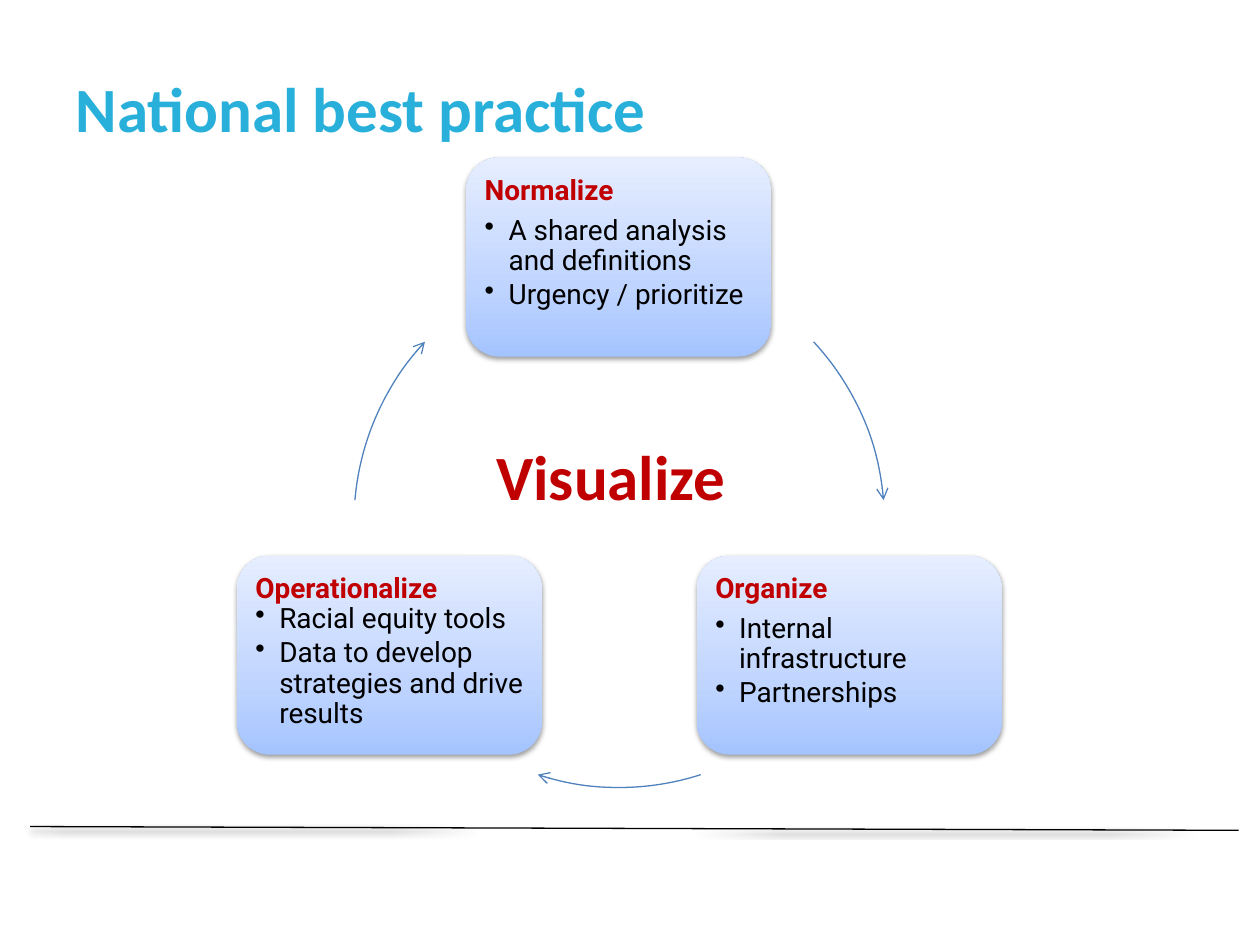
"""Build the "National best practice" slide with its three-step cycle."""
from lxml.etree import SubElement
from copy import deepcopy
from pptx import Presentation
from pptx.dml.color import RGBColor
from pptx.enum.shapes import MSO_CONNECTOR, MSO_SHAPE
from pptx.enum.text import MSO_ANCHOR, PP_ALIGN
from pptx.oxml.ns import qn
from pptx.util import Inches, Pt

CYAN = RGBColor(0x28, 0xB0, 0xDB)
RED = RGBColor(0xC0, 0x00, 0x00)
BLACK = RGBColor(0x00, 0x00, 0x00)
BLUE = RGBColor(0x4F, 0x81, 0xBD)
STOPS = [
    (0, RGBColor(0xA4, 0xC4, 0xFF)),
    (0.35, RGBColor(0xBF, 0xD4, 0xFF)),
    (1, RGBColor(0xE6, 0xEE, 0xFF)),
]

HEADING = {"size": Pt(36), "name": "Calibri", "bold": True}
STEP = {"size": Pt(16), "name": "Roboto", "bold": True}
ITEM = {"size": Pt(16), "name": "Roboto", "bold": False}
INSETS = {f"margin_{side}": Inches(0.07) for side in ("left", "top", "right", "bottom")}


def style(obj, values, color=None):
    for name, value in values.items():
        setattr(obj, name, value)
    if color is not None:
        obj.color.rgb = color


def add_shadow(sp):
    effects = SubElement(sp._element.spPr, qn("a:effectLst"))
    shadow = SubElement(effects, qn("a:outerShdw"), blurRad=str(Pt(3.1)),
                        dist=str(Pt(1.6)), dir="5400000", rotWithShape="0")
    black = SubElement(shadow, qn("a:srgbClr"), val="000000")
    SubElement(black, qn("a:alpha"), val="38000")


prs = Presentation()
prs.slide_width, prs.slide_height = Inches(10), Inches(7.5)
s = prs.slides.add_slide(prs.slide_layouts[5])

rule = s.shapes.add_connector(MSO_CONNECTOR.STRAIGHT, Inches(0.24), Inches(6.56),
                              Inches(9.83), Inches(6.59))
style(rule.line, {"width": Pt(0.75)}, BLACK)
add_shadow(rule)

title = s.shapes.title
style(title, {"left": Inches(0.5), "top": Inches(0.5),
              "width": Inches(9), "height": Inches(1.25)})
tf = title.text_frame
tf.vertical_anchor = MSO_ANCHOR.TOP
p = tf.paragraphs[0]
p.alignment = PP_ALIGN.LEFT
r = p.add_run()
r.text = "National best practice"
style(r.font, HEADING, CYAN)

steps = [
    (3.7, 1.25, "Normalize", 5.6,
     ["A shared analysis and definitions", "Urgency / prioritize"]),
    (5.53, 4.41, "Organize", 5.6,
     ["Internal infrastructure", "Partnerships"]),
    (1.88, 4.41, "Operationalize", 0,
     ["Racial equity tools", "Data to develop strategies and drive results"]),
]
for left, top, name, gap, items in steps:
    sp = s.shapes.add_shape(MSO_SHAPE.ROUNDED_RECTANGLE, Inches(left), Inches(top),
                            Inches(2.42), Inches(1.58))
    sp.fill.gradient()
    sp.fill.gradient_angle = 90
    first = sp._element.spPr.find(".//" + qn("a:gs"))
    first.addnext(deepcopy(first))
    for stop, (position, color) in zip(sp.fill.gradient_stops, STOPS):
        stop.position = position
        stop.color.rgb = color
    sp.line.fill.background()
    add_shadow(sp)

    tf = sp.text_frame
    style(tf, {**INSETS, "word_wrap": True, "vertical_anchor": MSO_ANCHOR.TOP})
    p = tf.paragraphs[0]
    style(p, {"alignment": PP_ALIGN.LEFT, "line_spacing": 0.9, "space_after": Pt(gap)})
    r = p.add_run()
    r.text = name
    style(r.font, STEP, RED)
    for item in items:
        p = tf.add_paragraph()
        style(p, {"level": 1, "alignment": PP_ALIGN.LEFT, "line_spacing": 0.9,
                  "space_after": Pt(2.4)})
        pPr = p._p.get_or_add_pPr()
        pPr.set("marL", str(Inches(0.19)))
        pPr.set("indent", str(Inches(-0.19)))
        SubElement(pPr, qn("a:buChar"), char="•")
        r = p.add_run()
        r.text = item
        style(r.font, ITEM, BLACK)

for start, end in [(317.1, 355.2), (72.1, 107.9), (184.8, 222.9)]:
    arc = s.shapes.add_shape(MSO_SHAPE.ARC, Inches(2.81), Inches(2.04),
                             Inches(4.21), Inches(4.21))
    arc.adjustments[0] = start * 0.6
    arc.adjustments[1] = end * 0.6
    arc.fill.background()
    style(arc.line, {"width": Pt(0.75)}, BLUE)
    arc.shadow.inherit = False
    SubElement(arc.line._get_or_add_ln(), qn("a:tailEnd"), type="arrow")

tb = s.shapes.add_textbox(Inches(3.84), Inches(3.42), Inches(2.15), Inches(0.71))
tf = tb.text_frame
tf.word_wrap = False
r = tf.paragraphs[0].add_run()
r.text = "Visualize"
style(r.font, HEADING, RED)

prs.save("out.pptx")
